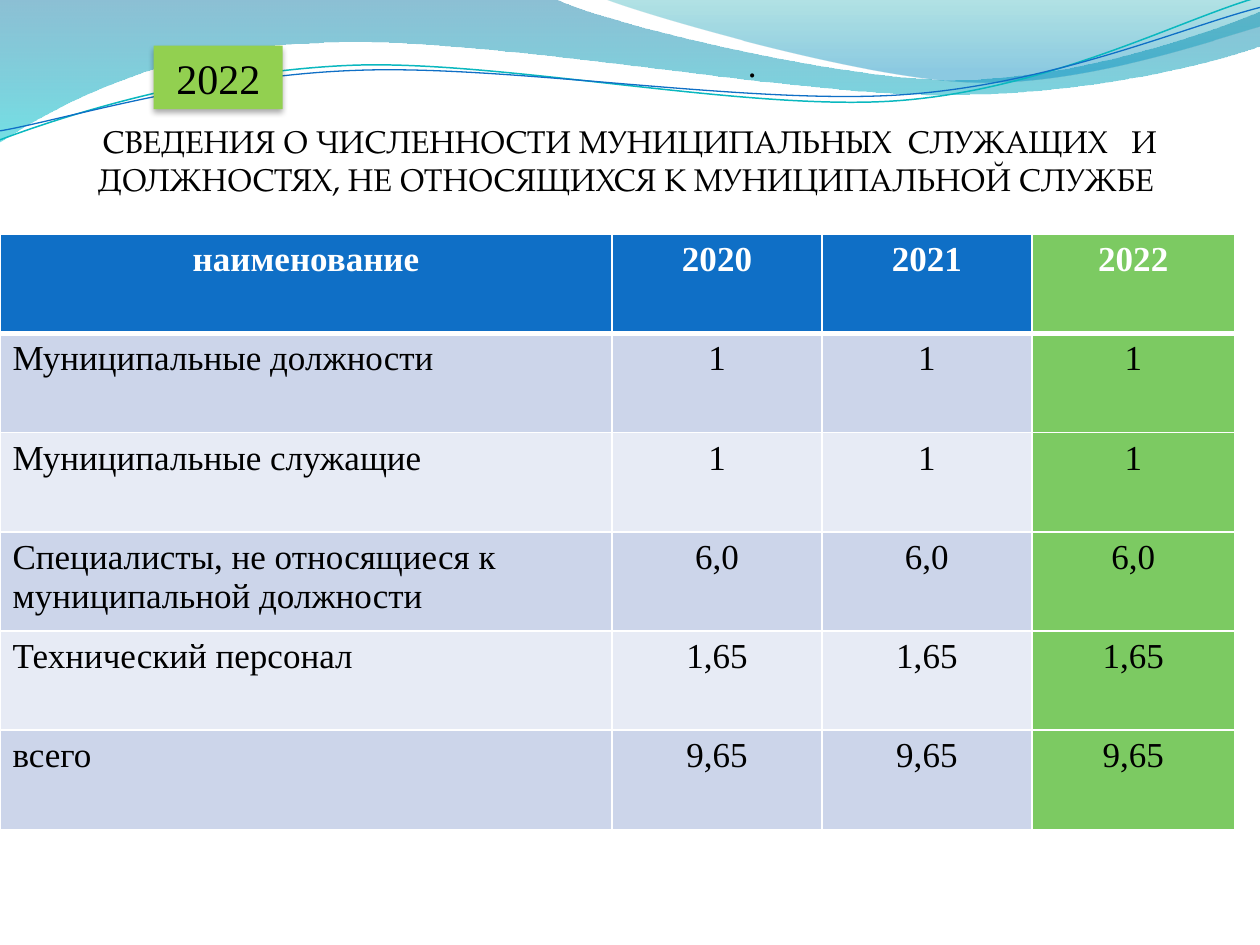
"""Build a slide on municipal staff numbers for 2020–2022."""
import math
from dataclasses import dataclass

import lxml.etree
import pptx
import pptx.dml.color
import pptx.enum.shapes
import pptx.enum.text
import pptx.oxml.ns
import pptx.util

Cm = pptx.util.Cm
Pt = pptx.util.Pt
RGBColor = pptx.dml.color.RGBColor
CENTER = pptx.enum.text.PP_ALIGN.CENTER
LEFT = pptx.enum.text.PP_ALIGN.LEFT
GROW = pptx.enum.text.MSO_AUTO_SIZE.SHAPE_TO_FIT_TEXT
qn = pptx.oxml.ns.qn

BLACK = RGBColor(0x00, 0x00, 0x00)
WHITE = RGBColor(0xFF, 0xFF, 0xFF)
BLUE = RGBColor(0x0F, 0x6F, 0xC6)
TEAL = RGBColor(0x0A, 0xB8, 0xBF)
LIME = RGBColor(0x92, 0xD0, 0x50)
GREEN = RGBColor(0x7C, 0xCA, 0x62)
BAND_DARK = RGBColor(0xCC, 0xD5, 0xEA)
BAND_LIGHT = RGBColor(0xE7, 0xEB, 0xF5)
DEEP_BLUE = RGBColor(0x00, 0x74, 0xA1)
TURQUOISE = RGBColor(0x00, 0xC6, 0xCF)
SEA_GREEN = RGBColor(0x00, 0xA1, 0xA9)
SKY_BLUE = RGBColor(0x00, 0x8B, 0xBF)

SERIF = "Times New Roman"
TITLE_FONT = "TeX Gyre Pagella"
LINE_TILT = -2.7

COLUMN_WIDTHS = (12.34, 4.23, 4.23, 4.09)
ROW_HEIGHT = 2
STAFF_ROWS = (
    ("наименование", "2020", "2021", "2022"),
    ("Муниципальные должности", "1", "1", "1"),
    ("Муниципальные служащие", "1", "1", "1"),
    ("Специалисты, не относящиеся к муниципальной должности", "6,0", "6,0", "6,0"),
    ("Технический персонал", "1,65", "1,65", "1,65"),
    ("всего", "9,65", "9,65", "9,65"),
)

Point = tuple[float, float]
Box = tuple[float, float, float, float]
Segment = tuple[Point, ...]


@dataclass(frozen=True)
class GradientStop:
    """Colour at a position, with opacity in percent."""
    position: float
    color: RGBColor
    opacity: int


@dataclass(frozen=True)
class Wave:
    """Filled outline of lines (1 point) and Bézier curves (3 points)."""
    box: Box
    segments: tuple[Segment, ...]
    stops: tuple[GradientStop, GradientStop]


@dataclass(frozen=True)
class WaveLine:
    """Tilted open curve."""
    box: Box
    segments: tuple[Segment, ...]
    color: RGBColor
    width: float


@dataclass(frozen=True)
class Caption:
    """Centred text box in centimetres."""
    text: str
    box: Box
    font: str
    size: int


WAVES = (
    Wave((-0.03, -0.03, 25.45, 2.9),
         (((0, 0),), ((11.18, -0.03),), ((12.09, 0.43), (16.87, 1.6), (19.25, 1.6)),
          ((21.67, 1.6), (24.33, 0.66), (25.4, 0.23)), ((25.43, 0.91),),
          ((24.97, 1.12), (22.1, 1.93), (18.95, 1.91)),
          ((15.8, 1.91), (9.7, 0.71), (6.53, 0.86)),
          ((3.28, 0.91), (1.17, 2.11), (-0.03, 2.87)), ((0, 0),)),
         (GradientStop(0, DEEP_BLUE, 45), GradientStop(1, TURQUOISE, 55))),
    Wave((12.17, -0.03, 13.23, 1.78),
         (((12.17, -0.03),), ((12.93, 0.28), (17.32, 1.57), (19.53, 1.65)),
          ((21.74, 1.75), (24.41, 0.81), (25.4, 0.53)), ((25.4, 0),), ((12.17, -0.03),)),
         (GradientStop(0, SEA_GREEN, 30), GradientStop(0.8, SKY_BLUE, 45))),
)
WAVE_LINES = (
    WaveLine((-0.05, 0.56, 25.45, 1.8),
             (((0, 2.82),), ((1.22, 2.36), (4.01, 1.45), (7.04, 1.32)),
              ((10.03, 1.19), (15.06, 2.26), (18.11, 2.03)),
              ((21.16, 1.8), (23.83, 0.38), (25.35, -0.05))), TEAL, 0.85),
    WaveLine((-0.05, 0.76, 25.48, 1.47),
             (((0, 2.64),), ((1.19, 2.44), (4.17, 1.52), (7.19, 1.42)),
              ((10.24, 1.3), (15.16, 2.13), (18.21, 1.91)),
              ((21.23, 1.7), (23.9, 0.53), (25.4, 0.15))), BLUE, 0.75),
)
DOT = Caption(". ", (5.11, 0.74, 20.29, 1.12), SERIF, 20)
TITLE = Caption(
    "СВЕДЕНИЯ О ЧИСЛЕННОСТИ МУНИЦИПАЛЬНЫХ  СЛУЖАЩИХ   И ДОЛЖНОСТЯХ, "
    "НЕ ОТНОСЯЩИХСЯ К МУНИЦИПАЛЬНОЙ СЛУЖБЕ ", (0, 2.33, 25.4, 1.8), TITLE_FONT, 18)


def rotate(point: Point, center: Point, degrees: float) -> Point:
    """Turn a point clockwise about a centre."""
    angle = math.radians(degrees)
    x, y = point[0] - center[0], point[1] - center[1]
    return (center[0] + x * math.cos(angle) - y * math.sin(angle),
            center[1] + x * math.sin(angle) + y * math.cos(angle))


def add_outline(slide, box: Box, segments: tuple[Segment, ...], tilt: float = 0):
    """Add a freeform of lines and Bézier curves, the first segment being its start."""
    left, top, width, height = box
    builder = slide.shapes.build_freeform(Cm(left), Cm(top))
    builder.add_line_segments([(Cm(left + width), Cm(top + height))], close=False)
    shape = builder.convert_to_shape()
    shape.shadow.inherit = False
    shape.rotation = tilt
    center = (left + width / 2, top + height / 2)
    outline = shape.element.xpath(".//a:pathLst/a:path")[0]
    for child in list(outline):
        outline.remove(child)
    for index, segment in enumerate(segments):
        tag = "a:moveTo" if index == 0 else "a:lnTo" if len(segment) == 1 else "a:cubicBezTo"
        step = lxml.etree.SubElement(outline, qn(tag))
        for point in segment:
            x, y = rotate(point, center, -tilt)
            lxml.etree.SubElement(step, qn("a:pt"), x=str(int(Cm(x - left))),
                                  y=str(int(Cm(y - top))))
    return shape


def add_wave(slide, wave: Wave) -> None:
    """Draw a wave with a translucent vertical gradient."""
    shape = add_outline(slide, wave.box, wave.segments)
    shape.line.fill.background()
    shape.fill.gradient()
    shape.fill.gradient_angle = 270
    for target, stop in zip(shape.fill.gradient_stops, wave.stops):
        target.position = stop.position
        target.color.rgb = stop.color
    for color, stop in zip(shape.element.xpath(".//a:gradFill//a:srgbClr"), wave.stops):
        lxml.etree.SubElement(color, qn("a:alpha"), val=str(stop.opacity * 1000))


def add_wave_line(slide, line: WaveLine) -> None:
    """Draw a thin tilted curve."""
    shape = add_outline(slide, line.box, line.segments, LINE_TILT)
    shape.fill.background()
    shape.line.color.rgb = line.color
    shape.line.width = Pt(line.width)


def write(frame, text: str, font: str, size: int, color: RGBColor = BLACK,
          alignment=CENTER, bold: bool = False) -> None:
    """Fill a text frame with one formatted paragraph."""
    frame.word_wrap = True
    paragraph = frame.paragraphs[0]
    paragraph.text = text
    paragraph.alignment = alignment
    paragraph.font.name = font
    paragraph.font.size = Pt(size)
    paragraph.font.bold = bold
    paragraph.font.color.rgb = color


def add_caption(slide, caption: Caption) -> None:
    """Add a centred text box."""
    frame = slide.shapes.add_textbox(*map(Cm, caption.box)).text_frame
    write(frame, caption.text, caption.font, caption.size)
    frame.auto_size = GROW


def add_year_badge(slide) -> None:
    """Add the green year badge with its soft shadow."""
    shape = slide.shapes.add_shape(pptx.enum.shapes.MSO_SHAPE.RECTANGLE,
                                   Cm(3.1), Cm(0.92), Cm(2.6), Cm(1.28))
    shape.fill.solid()
    shape.fill.fore_color.rgb = LIME
    shape.line.fill.background()
    shape.shadow.inherit = False
    effects = shape.element.spPr.find(qn("a:effectLst"))
    shadow = lxml.etree.SubElement(effects, qn("a:outerShdw"), blurRad=str(Pt(3.5)),
                                   dist=str(Pt(2.2)), dir="5400000", rotWithShape="0")
    color = lxml.etree.SubElement(shadow, qn("a:srgbClr"), val=str(BLACK))
    lxml.etree.SubElement(color, qn("a:alpha"), val="32000")
    write(shape.text_frame, "2022", SERIF, 24)
    shape.text_frame.auto_size = GROW


def set_borders(cell, row: int) -> None:
    """Give a cell white borders, thick under the header."""
    properties = cell._tc.get_or_add_tcPr()
    widths = {"L": 1, "R": 1, "T": 3 if row == 1 else 1, "B": 3 if row == 0 else 1}
    for index, (side, width) in enumerate(widths.items()):
        border = lxml.etree.Element(qn(f"a:ln{side}"), w=str(Pt(width)))
        fill = lxml.etree.SubElement(border, qn("a:solidFill"))
        lxml.etree.SubElement(fill, qn("a:srgbClr"), val=str(WHITE))
        properties.insert(index, border)


def add_staff_table(slide) -> None:
    """Add the staff table with the last year highlighted."""
    table = slide.shapes.add_table(
        len(STAFF_ROWS), len(COLUMN_WIDTHS), Cm(0), Cm(4.72),
        Cm(sum(COLUMN_WIDTHS)), Cm(ROW_HEIGHT * len(STAFF_ROWS))).table
    for column, width in zip(table.columns, COLUMN_WIDTHS):
        column.width = Cm(width)
    for row, texts in enumerate(STAFF_ROWS):
        header = row == 0
        row_color = BLUE if header else BAND_DARK if row % 2 else BAND_LIGHT
        for column, text in enumerate(texts):
            cell = table.cell(row, column)
            cell.fill.solid()
            cell.fill.fore_color.rgb = GREEN if column == len(texts) - 1 else row_color
            set_borders(cell, row)
            write(cell.text_frame, text, SERIF, 20, WHITE if header else BLACK,
                  CENTER if header or column else LEFT, header)


def main() -> None:
    """Build and save the presentation."""
    presentation = pptx.Presentation()
    presentation.slide_width, presentation.slide_height = Cm(25.4), Cm(19.05)
    slide = presentation.slides.add_slide(presentation.slide_layouts[6])
    for wave in WAVES:
        add_wave(slide, wave)
    for line in WAVE_LINES:
        add_wave_line(slide, line)
    add_year_badge(slide)
    add_caption(slide, DOT)
    add_staff_table(slide)
    add_caption(slide, TITLE)
    presentation.save("out.pptx")


if __name__ == "__main__":
    main()
